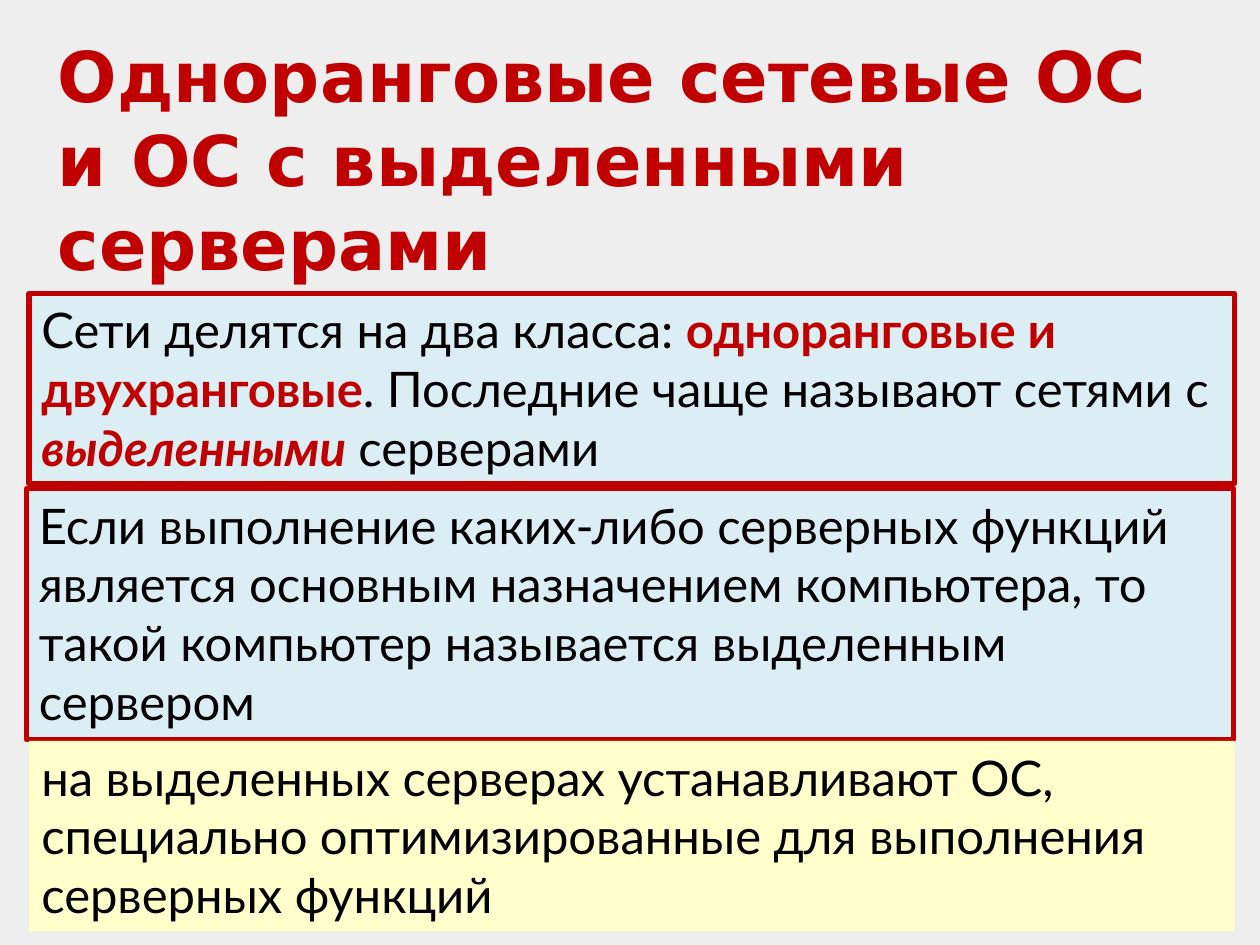
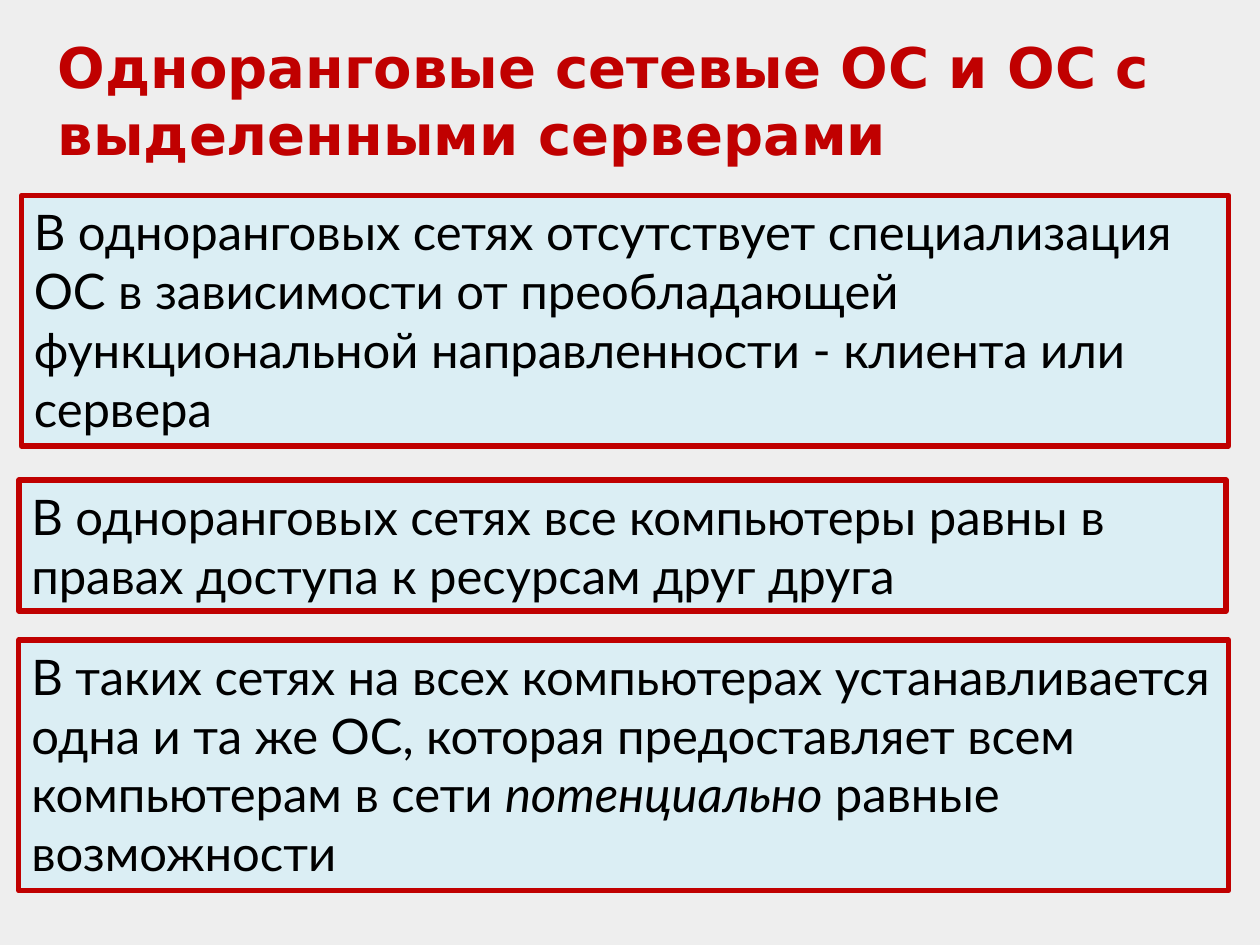
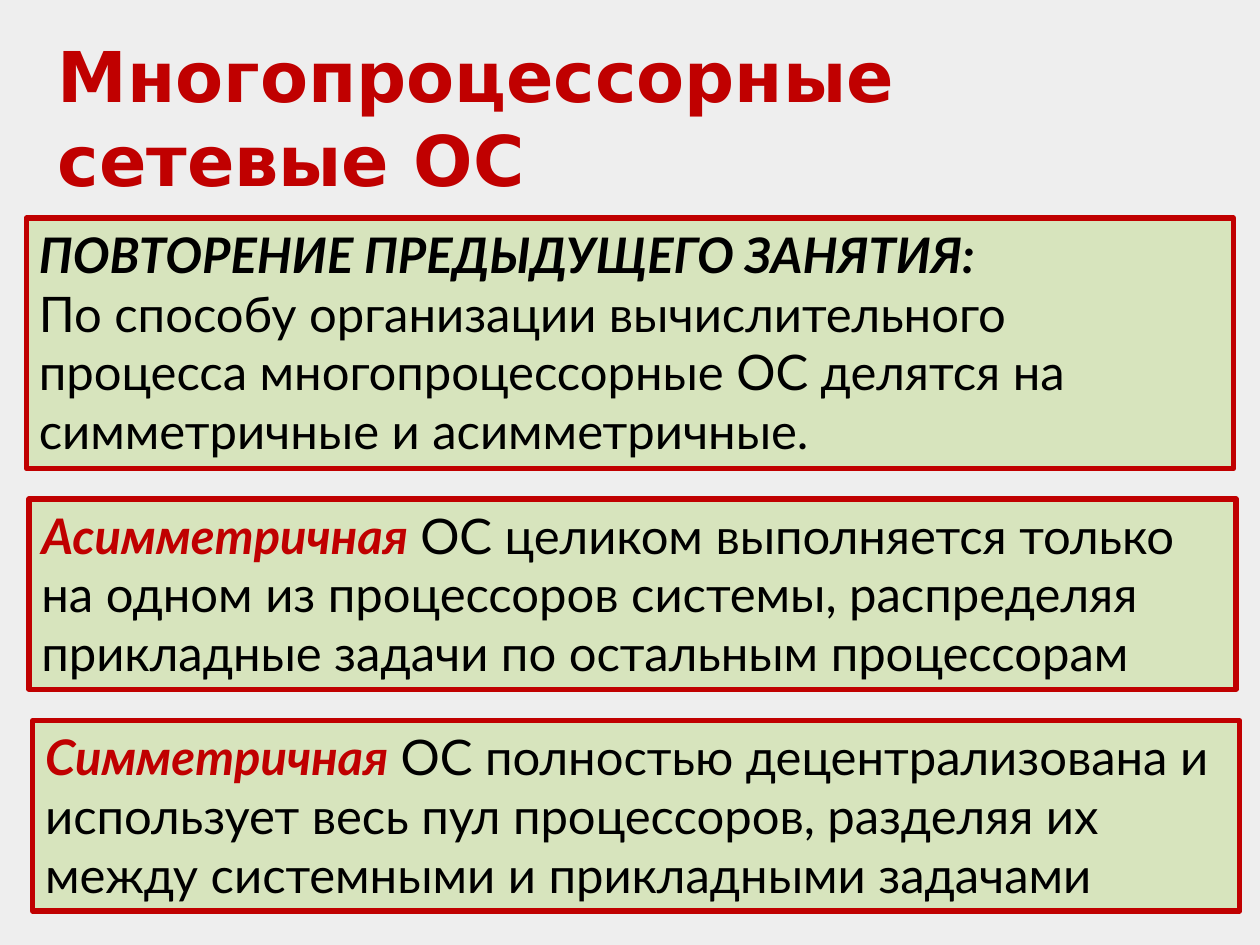
from pptx import Presentation
from pptx.dml.color import RGBColor
from pptx.enum.shapes import MSO_SHAPE
from pptx.enum.text import MSO_ANCHOR, MSO_AUTO_SIZE, PP_ALIGN
from pptx.util import Inches, Pt

RECTANGLE = MSO_SHAPE.RECTANGLE
TOP = MSO_ANCHOR.TOP
GROW = MSO_AUTO_SIZE.SHAPE_TO_FIT_TEXT
LEFT = PP_ALIGN.LEFT

BACKGROUND = RGBColor(0xEE, 0xEE, 0xEE)
RED = RGBColor(0xC0, 0x00, 0x00)
BLACK = RGBColor(0x00, 0x00, 0x00)
BLUE = RGBColor(0xDB, 0xEE, 0xF4)
YELLOW = RGBColor(0xFF, 0xFF, 0xCC)
GREEN = RGBColor(0xD7, 0xE4, 0xBD)

TITLE_FONT = "DejaVu Sans"
BODY_FONT = "Lato"

PLAIN = {}
ITALIC = {"italic": True}
HEADING = {"bold": True, "italic": True}
KEY = {"bold": True, "color": RED}
TERM = {"bold": True, "italic": True, "color": RED}

HEIGHTS = {2: 1.04, 3: 1.51, 4: 1.99}
PEER_TITLE = "Одноранговые сетевые ОС и ОС с выделенными серверами"

SLIDES = [
    (PEER_TITLE, 40, 2.12, [
        (0.23, 2.33, 9.57, 3, BLUE, True, [[
            ("Сети делятся на два класса: ", PLAIN),
            ("одноранговые и двухранговые", KEY),
            (". Последние чаще называют сетями с ", PLAIN),
            ("выделенными", TERM),
            (" серверами", PLAIN)]]),
        (0.21, 3.88, 9.58, 4, BLUE, True, [[
            ("Если выполнение каких-либо серверных функций является основным "
             "назначением компьютера, то такой компьютер называется "
             "выделенным сервером", PLAIN)]]),
        (0.23, 5.88, 9.57, 3, YELLOW, False, [[
            ("на выделенных серверах устанавливают ОС, специально "
             "оптимизированные для выполнения серверных функций", PLAIN)]]),
    ]),
    (PEER_TITLE, 32, 1.18, [
        (0.17, 1.55, 9.58, 4, BLUE, True, [[
            ("В одноранговых сетях отсутствует специализация ОС в зависимости "
             "от преобладающей функциональной направленности - клиента или "
             "сервера", PLAIN)]]),
        (0.15, 3.81, 9.58, 2, BLUE, True, [[
            ("В одноранговых сетях все компьютеры равны в правах доступа к "
             "ресурсам друг друга", PLAIN)]]),
        (0.15, 5.08, 9.6, 4, BLUE, True, [[
            ("В таких сетях на всех компьютерах устанавливается одна и та же "
             "ОС, которая предоставляет всем компьютерам в сети ", PLAIN),
            ("потенциально", ITALIC),
            (" равные возможности", PLAIN)]]),
    ]),
    ("Многопроцессорные сетевые ОС", 40, 1.45, [
        (0.21, 1.73, 9.58, 4, GREEN, True, [
            [("ПОВТОРЕНИЕ ПРЕДЫДУЩЕГО ЗАНЯТИЯ:", HEADING)],
            [("По способу организации вычислительного процесса "
              "многопроцессорные ОС делятся на симметричные и "
              "асимметричные.", PLAIN)]]),
        (0.23, 3.96, 9.58, 3, GREEN, True, [[
            ("Асимметричная", TERM),
            (" ОС целиком выполняется только на одном из процессоров системы, "
             "распределяя прикладные задачи по остальным процессорам", PLAIN)]]),
        (0.26, 5.72, 9.58, 3, GREEN, True, [[
            ("Симметричная", TERM),
            (" ОС полностью децентрализована и использует весь пул "
             "процессоров, разделяя их между системными и прикладными "
             "задачами", PLAIN)]]),
    ]),
]


def add_run(paragraph, text, font=BODY_FONT, size=28, color=BLACK, bold=False, italic=False):
    run = paragraph.add_run()
    run.text = text
    run.font.name = font
    run.font.size = Pt(size)
    run.font.color.rgb = color
    run.font.bold = bold
    run.font.italic = italic


def prepare_frame(shape):
    frame = shape.text_frame
    frame.word_wrap = True
    frame.auto_size = GROW
    frame.vertical_anchor = TOP
    return frame


prs = Presentation()
prs.slide_width = Inches(10)
prs.slide_height = Inches(7.5)

for title, title_size, title_height, statements in SLIDES:
    slide = prs.slides.add_slide(prs.slide_layouts[6])
    slide.background.fill.solid()
    slide.background.fill.fore_color.rgb = BACKGROUND

    heading = slide.shapes.add_textbox(
        Inches(0.36), Inches(0.21), Inches(9.28), Inches(title_height))
    add_run(prepare_frame(heading).paragraphs[0], title,
            font=TITLE_FONT, size=title_size, color=RED, bold=True)

    for left, top, width, lines, fill, outlined, paragraphs in statements:
        statement = slide.shapes.add_shape(
            RECTANGLE, Inches(left), Inches(top), Inches(width), Inches(HEIGHTS[lines]))
        statement.shadow.inherit = False
        statement.fill.solid()
        statement.fill.fore_color.rgb = fill
        if outlined:
            statement.line.color.rgb = RED
            statement.line.width = Pt(3)
        else:
            statement.line.fill.background()

        frame = prepare_frame(statement)
        for index, runs in enumerate(paragraphs):
            paragraph = frame.add_paragraph() if index else frame.paragraphs[0]
            paragraph.alignment = LEFT
            for text, style in runs:
                add_run(paragraph, text, **style)

prs.save("out.pptx")
